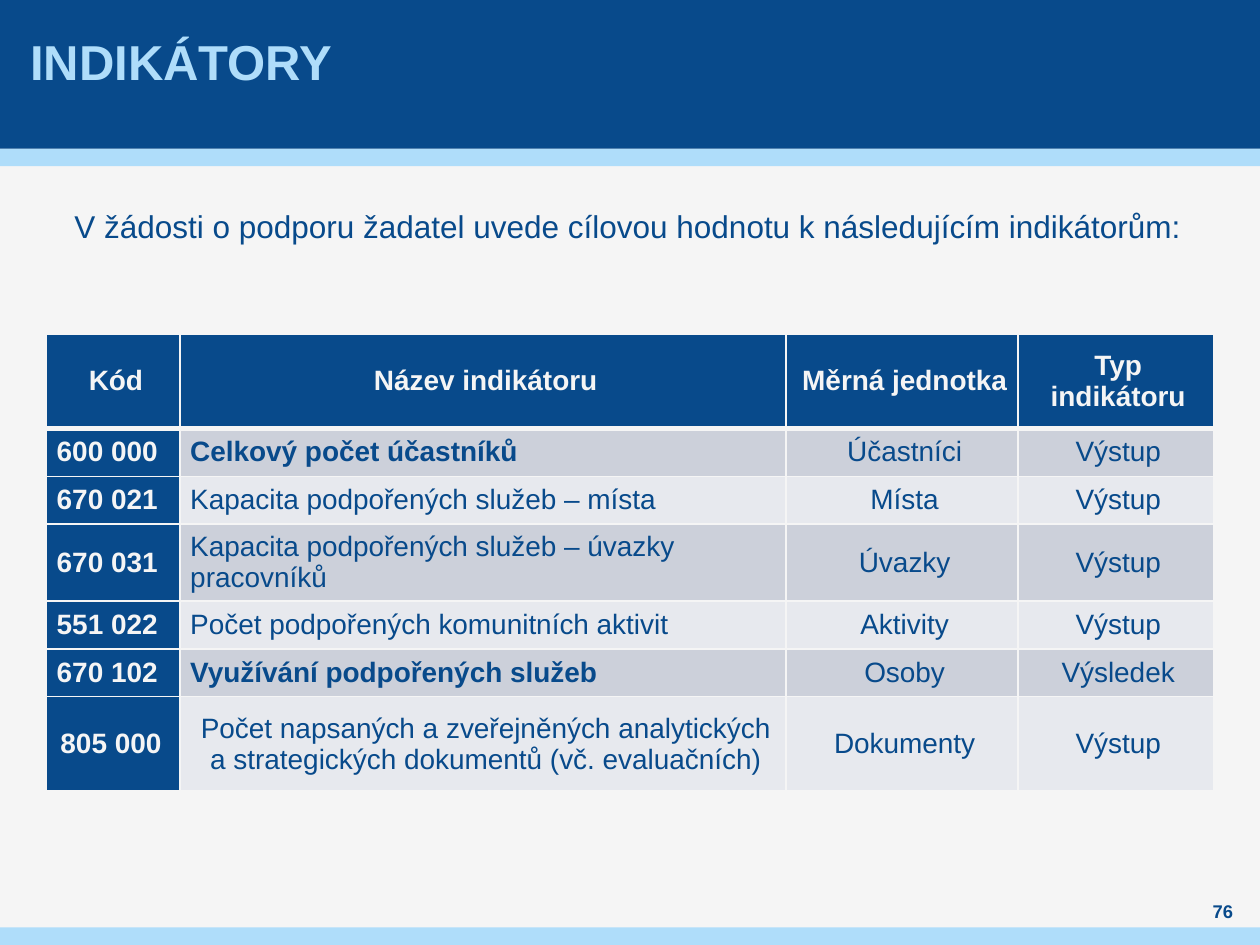
from lxml.etree import SubElement
from pptx import Presentation
from pptx.dml.color import RGBColor
from pptx.enum.shapes import MSO_SHAPE
from pptx.enum.text import MSO_ANCHOR, PP_ALIGN
from pptx.oxml.ns import qn
from pptx.util import Inches, Pt

COLORS = {
    "navy": "084A8B",
    "sky": "AFDDFA",
    "paper": "F5F5F5",
    "odd": "CCD0DA",
    "even": "E7E9EE",
}
TITLE = "INDIKÁTORY"
INTRO = "V žádosti o podporu žadatel uvede cílovou hodnotu k následujícím indikátorům:"
PAGE_NUMBER = "76"
BANDS = [(1.18, 0.14, "sky"), (0, 1.18, "navy"), (7.36, 0.14, "sky")]

INDICATORS = [
    ("Kód", "Název indikátoru", "Měrná jednotka", "Typ indikátoru"),
    ("600 000", "Celkový počet účastníků", "Účastníci", "Výstup"),
    ("670 021", "Kapacita podpořených služeb – místa", "Místa", "Výstup"),
    ("670 031", "Kapacita podpořených služeb – úvazky pracovníků", "Úvazky", "Výstup"),
    ("551 022", "Počet podpořených komunitních aktivit", "Aktivity", "Výstup"),
    ("670 102", "Využívání podpořených služeb", "Osoby", "Výsledek"),
    (
        "805 000",
        "Počet napsaných a zveřejněných analytických a strategických dokumentů (vč. evaluačních)",
        "Dokumenty",
        "Výstup",
    ),
]
BOLD_NAMES = {"Celkový počet účastníků", "Využívání podpořených služeb"}
COLUMN_WIDTHS = [1.06, 4.81, 1.84, 1.55]
ROW_HEIGHTS = [0.75, 0.38, 0.38, 0.61, 0.38, 0.38, 0.75]
LAST_ROW = len(INDICATORS) - 1


def rgb(name):
    return RGBColor.from_string(COLORS[name])


def place(part, left, top, width, height):
    part.left, part.top = Inches(left), Inches(top)
    part.width, part.height = Inches(width), Inches(height)


def set_frame(frame, side, anchor):
    frame.word_wrap = True
    frame.vertical_anchor = anchor
    frame.margin_left = frame.margin_right = Inches(side)
    frame.margin_top = frame.margin_bottom = 0


def write(paragraph, text, size, color, bold, align):
    paragraph.alignment = align
    run = paragraph.add_run()
    run.text = text
    run.font.name = "Arial"
    run.font.size = Pt(size)
    run.font.bold = bold
    run.font.color.rgb = rgb(color)


def add_borders(cell, header):
    properties = cell._tc.get_or_add_tcPr()
    sides = {"lnL": 1, "lnR": 1, "lnT": 1, "lnB": 3 if header else 1}
    for position, (side, width) in enumerate(sides.items()):
        line = SubElement(properties, qn(f"a:{side}"), w=str(Pt(width)))
        fill = SubElement(line, qn("a:solidFill"))
        SubElement(fill, qn("a:srgbClr"), val=COLORS["paper"])
        properties.insert(position, line)


def fill_cell(cell, row, column, text):
    header = row == 0
    dark = header or column == 0
    cell.fill.solid()
    cell.fill.fore_color.rgb = rgb("navy" if dark else "odd" if row % 2 else "even")
    add_borders(cell, header)
    cell.vertical_anchor = MSO_ANCHOR.MIDDLE
    cell.margin_left = cell.margin_right = Inches(0.07 if row == LAST_ROW else 0.04)
    cell.margin_top = cell.margin_bottom = 0
    paragraph = cell.text_frame.paragraphs[0]
    paragraph.space_before = paragraph.space_after = Pt(3)
    paragraph._p.get_or_add_pPr().set("marL", str(Inches(0.04)))
    centered = header or column > 1 or (row == LAST_ROW and column == 1)
    write(paragraph, text, 16, "paper" if dark else "navy", dark or text in BOLD_NAMES,
          PP_ALIGN.CENTER if centered else PP_ALIGN.LEFT)


def main():
    deck = Presentation()
    deck.slide_width, deck.slide_height = Inches(10), Inches(7.5)
    slide = deck.slides.add_slide(deck.slide_layouts[1])
    slide.background.fill.solid()
    slide.background.fill.fore_color.rgb = rgb("paper")
    title, intro = slide.shapes.title, slide.placeholders[1]

    for top, height, color in BANDS:
        band = slide.shapes.add_shape(
            MSO_SHAPE.RECTANGLE, 0, Inches(top), deck.slide_width, Inches(height))
        band.shadow.inherit = False
        band.fill.solid()
        band.fill.fore_color.rgb = rgb(color)
        band.line.fill.background()
        title.element.addprevious(band.element)

    place(title, 0.2, -0.11, 9.21, 1.18)
    set_frame(title.text_frame, 0.04, MSO_ANCHOR.MIDDLE)
    write(title.text_frame.paragraphs[0], TITLE, 28, "sky", True, PP_ALIGN.LEFT)

    place(intro, 0.59, 1.62, 8.82, 5.04)
    set_frame(intro.text_frame, 0, MSO_ANCHOR.TOP)
    sentence = intro.text_frame.paragraphs[0]
    sentence.line_spacing = 1.07
    sentence.space_before, sentence.space_after = Pt(6), Pt(8)
    properties = sentence._p.get_or_add_pPr()
    properties.set("marL", "0")
    properties.set("indent", "0")
    SubElement(properties, qn("a:buNone"))
    write(sentence, INTRO, 18, "navy", False, PP_ALIGN.JUSTIFY)

    page = slide.shapes.add_textbox(Inches(9.45), Inches(7.13), Inches(0.51), Inches(0.2))
    set_frame(page.text_frame, 0, MSO_ANCHOR.MIDDLE)
    write(page.text_frame.paragraphs[0], PAGE_NUMBER, 10.5, "navy", True, PP_ALIGN.CENTER)

    indicators = slide.shapes.add_table(
        len(INDICATORS), len(COLUMN_WIDTHS), Inches(0.37), Inches(2.65),
        Inches(sum(COLUMN_WIDTHS)), Inches(sum(ROW_HEIGHTS))).table
    for column, width in zip(indicators.columns, COLUMN_WIDTHS):
        column.width = Inches(width)
    for row, (height, texts) in enumerate(zip(ROW_HEIGHTS, INDICATORS)):
        indicators.rows[row].height = Inches(height)
        for column, text in enumerate(texts):
            fill_cell(indicators.cell(row, column), row, column, text)

    deck.save("out.pptx")


if __name__ == "__main__":
    main()
